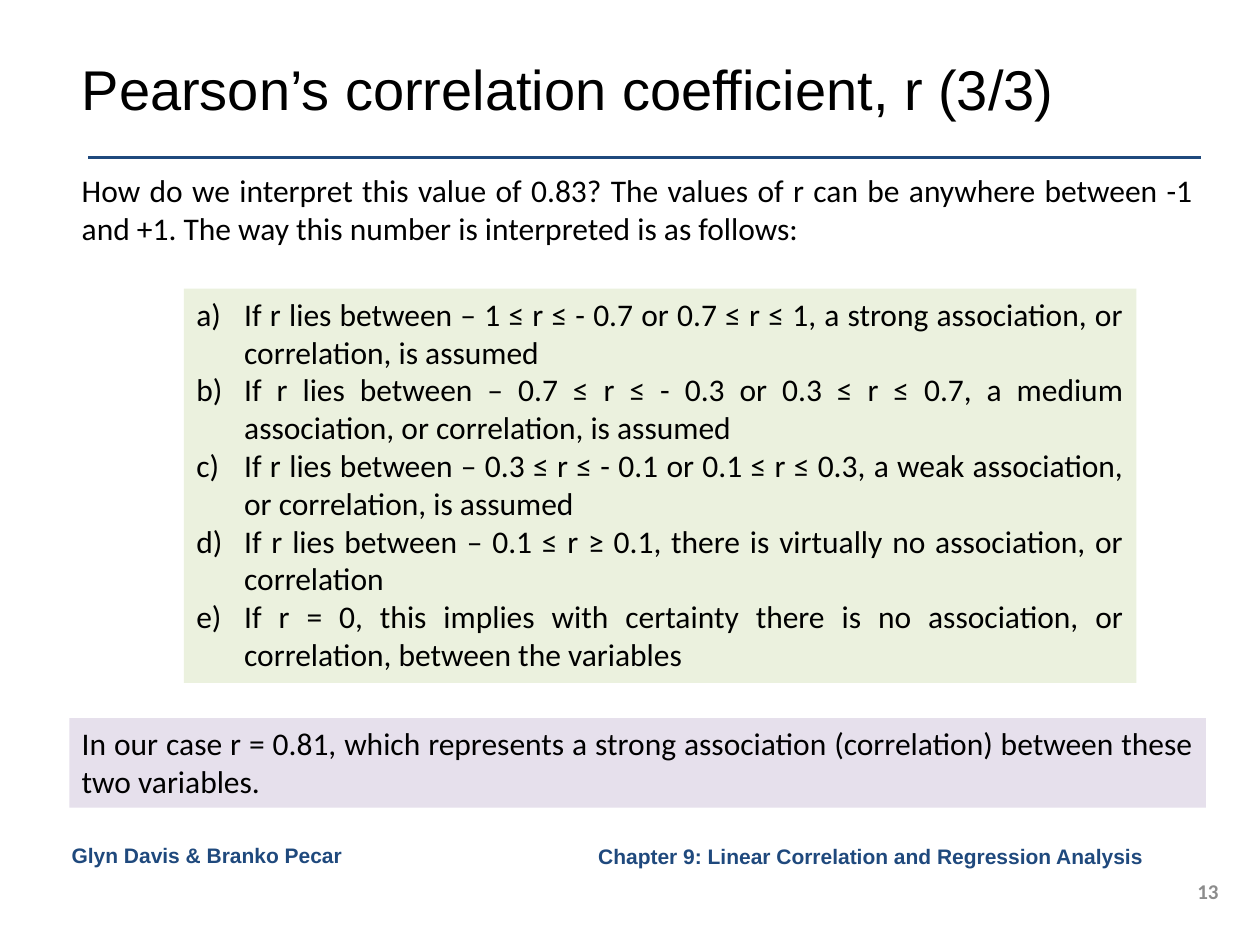
from lxml.etree import SubElement
from pptx import Presentation
from pptx.dml.color import RGBColor
from pptx.enum.shapes import MSO_CONNECTOR, MSO_SHAPE
from pptx.enum.text import MSO_ANCHOR, PP_ALIGN
from pptx.oxml.ns import qn
from pptx.util import Inches, Pt

COLORS = {
    "navy": "1F497D",
    "black": "000000",
    "gray": "8C8C8C",
    "green": "EBF1DE",
    "lilac": "E6E0EC",
}

INTRODUCTION = (
    "How do we interpret this value of 0.83? The values of r can be anywhere "
    "between -1 and +1. The way this number is interpreted is as follows:"
)
RULES = [
    "If r lies between – 1 ≤ r ≤ - 0.7 or 0.7 ≤ r ≤ 1, a strong association, or correlation, is assumed",
    "If r lies between – 0.7 ≤ r ≤ - 0.3 or 0.3 ≤ r ≤ 0.7, a medium association, or correlation, is assumed",
    "If r lies between – 0.3 ≤ r ≤ - 0.1 or 0.1 ≤ r ≤ 0.3, a weak association, or correlation, is assumed",
    "If r lies between – 0.1 ≤ r ≥ 0.1, there is virtually no association, or correlation",
    "If r = 0, this implies with certainty there is no association, or correlation, between the variables",
]
CONCLUSION = (
    "In our case r = 0.81, which represents a strong association (correlation) "
    "between these two variables."
)
BODY = {"size": 18, "font": "Calibri", "color": "black", "align": PP_ALIGN.JUSTIFY}
FOOTER = {"size": 12, "font": "Arial", "color": "navy", "bold": True}


def color(name):
    return RGBColor.from_string(COLORS[name])


def number_paragraph(paragraph):
    properties = paragraph._p.get_or_add_pPr()
    indent = Inches(0.38)
    properties.set("marL", str(indent))
    properties.set("indent", str(-indent))
    SubElement(properties, qn("a:buAutoNum"), type="alphaLcParenR")


def write_text(shape, texts, *, size, font, color_name=None, color="black", bold=False,
               align=PP_ALIGN.LEFT, anchor=MSO_ANCHOR.TOP, numbered=False):
    frame = shape.text_frame
    frame.word_wrap = True
    frame.vertical_anchor = anchor
    for index, text in enumerate(texts):
        paragraph = frame.paragraphs[0] if index == 0 else frame.add_paragraph()
        paragraph.alignment = align
        if numbered:
            number_paragraph(paragraph)
        run = paragraph.add_run()
        run.text = text
        run.font.size = Pt(size)
        run.font.name = font
        run.font.bold = bold
        run.font.color.rgb = RGBColor.from_string(COLORS[color])


def add_text(slide, text, left, top, width, height, **text_format):
    box = slide.shapes.add_textbox(Inches(left), Inches(top), Inches(width), Inches(height))
    write_text(box, [text], **text_format)


def add_panel(slide, texts, left, top, width, height, fill, **text_format):
    panel = slide.shapes.add_shape(
        MSO_SHAPE.RECTANGLE, Inches(left), Inches(top), Inches(width), Inches(height))
    panel.shadow.inherit = False
    panel.fill.solid()
    panel.fill.fore_color.rgb = color(fill)
    panel.line.fill.background()
    write_text(panel, texts, **text_format)


def add_rule_line(slide, left, right, top):
    line = slide.shapes.add_connector(
        MSO_CONNECTOR.STRAIGHT, Inches(left), Inches(top), Inches(right), Inches(top))
    line.line.color.rgb = color("navy")
    line.line.width = Pt(2)
    SubElement(line._element.spPr, qn("a:effectLst"))


def main():
    presentation = Presentation()
    presentation.slide_width = Inches(10)
    presentation.slide_height = Inches(7.5)
    slide = presentation.slides.add_slide(presentation.slide_layouts[6])

    add_rule_line(slide, 0.7, 9.53, 1.25)
    add_text(slide, "Chapter 9: Linear Correlation and Regression Analysis ",
             3.67, 6.64, 5.55, 0.31, align=PP_ALIGN.RIGHT, anchor=MSO_ANCHOR.MIDDLE, **FOOTER)
    add_text(slide, "Pearson’s correlation coefficient, r (3/3)",
             0.55, 0.31, 9.02, 0.78, size=32, font="Arial", anchor=MSO_ANCHOR.MIDDLE)
    add_text(slide, "13", 9.3, 6.95, 0.47, 0.24, size=12, font="Calibri", color="gray",
             bold=True, align=PP_ALIGN.RIGHT, anchor=MSO_ANCHOR.MIDDLE)
    add_text(slide, "Glyn Davis & Branko Pecar", 0.47, 6.64, 2.97, 0.31, **FOOTER)
    add_text(slide, INTRODUCTION, 0.55, 1.31, 9.02, 0.71, **BODY)
    add_panel(slide, RULES, 1.46, 2.29, 7.56, 3.13, "green", numbered=True, **BODY)
    add_panel(slide, [CONCLUSION], 0.55, 5.7, 9.02, 0.71, "lilac", **BODY)

    presentation.save("out.pptx")


if __name__ == "__main__":
    main()
